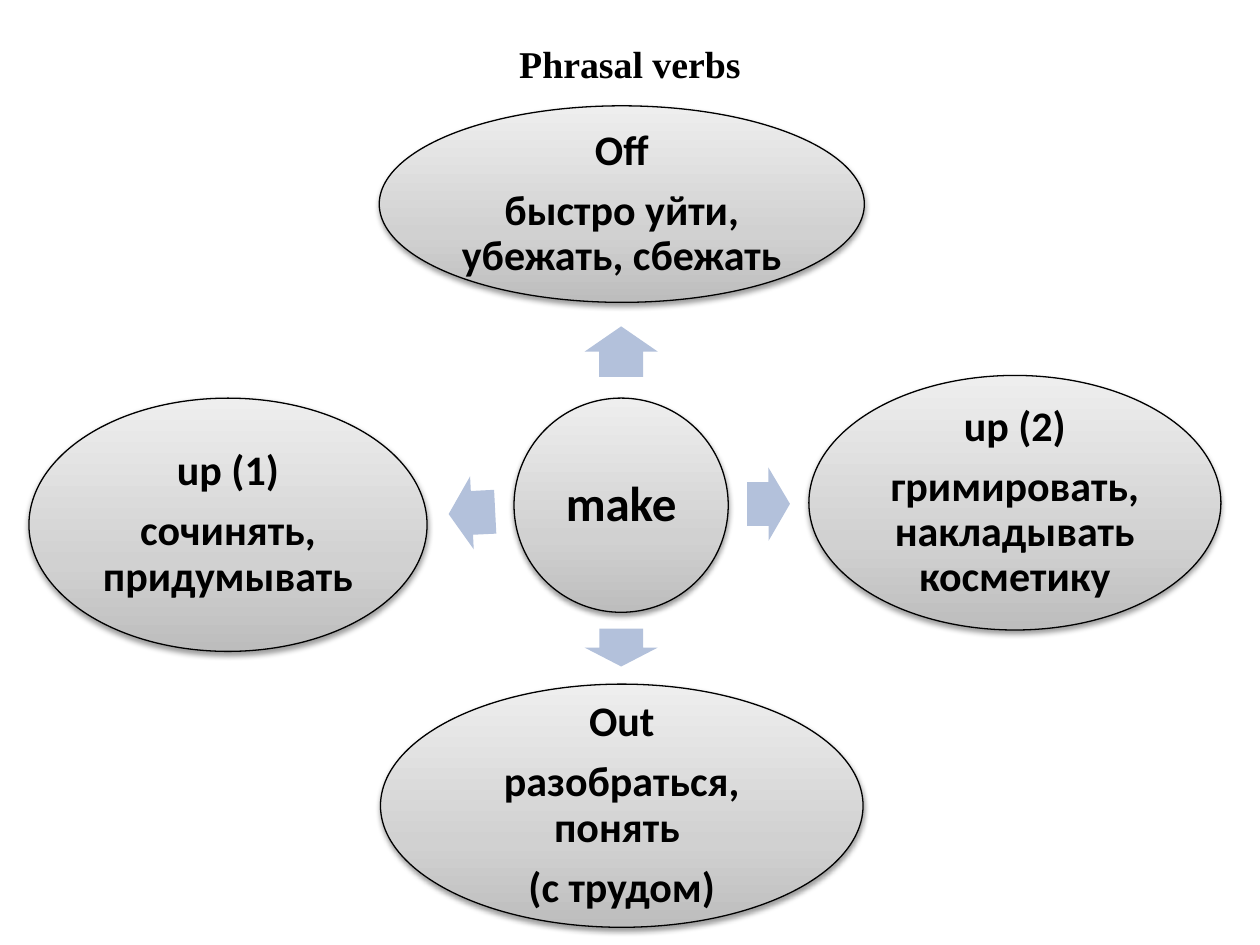
import copy
from dataclasses import dataclass

import pptx
import pptx.dml.color
import pptx.enum.shapes
import pptx.enum.text
import pptx.oxml
import pptx.oxml.ns
import pptx.util
from pptx.util import Inches

BLACK = pptx.dml.color.RGBColor(0x00, 0x00, 0x00)
ARROW_BLUE = pptx.dml.color.RGBColor(0xB3, 0xC1, 0xDB)
GRAY_STOPS = [
    (0.0, pptx.dml.color.RGBColor(0xBD, 0xBD, 0xBD)),
    (0.35, pptx.dml.color.RGBColor(0xD1, 0xD1, 0xD1)),
    (1.0, pptx.dml.color.RGBColor(0xEE, 0xEE, 0xEE)),
]
SHADOW_XML = (
    f'<a:outerShdw {pptx.oxml.ns.nsdecls("a")} blurRad="39370" dist="20320" '
    'dir="5400000" rotWithShape="0"><a:srgbClr val="000000">'
    '<a:alpha val="38000"/></a:srgbClr></a:outerShdw>'
)
SHAPES = pptx.enum.shapes.MSO_SHAPE


@dataclass(frozen=True)
class Bubble:
    left: float
    top: float
    width: float
    height: float
    lines: tuple[str, ...]
    font_size: int = 24
    inset: float = 0.03


@dataclass(frozen=True)
class Arrow:
    left: float
    top: float
    length: float
    rotation: float


ARROW_WIDTH = 0.58
BUBBLES = [
    Bubble(4.08, 3.16, 1.7, 1.7, ("make",), font_size=28, inset=0.04),
    Bubble(3.01, 0.84, 3.85, 1.56, ("Off", "быстро уйти, убежать, сбежать")),
    Bubble(6.42, 2.98, 3.27, 2.02, ("up (2)", "гримировать, накладывать косметику")),
    Bubble(3.02, 5.43, 3.83, 1.93, ("Out", "разобраться, понять ", "(с трудом)")),
    Bubble(0.23, 3.16, 3.16, 2.01, ("up (1)", "сочинять, придумывать")),
]
ARROWS = [
    Arrow(4.73, 2.5, 0.4, 270),
    Arrow(5.93, 3.71, 0.34, 359.7),
    Arrow(4.78, 4.85, 0.3, 90),
    Arrow(3.56, 3.78, 0.37, 177.1),
]


def format_paragraph(paragraph, font_name: str, font_size: float) -> None:
    paragraph.alignment = pptx.enum.text.PP_ALIGN.CENTER
    for run in paragraph.runs:
        run.font.name = font_name
        run.font.size = pptx.util.Pt(font_size)
        run.font.bold = True
        run.font.color.rgb = BLACK


def fill_with_gradient(shape) -> None:
    """Shade the shape from dark gray at the bottom to light gray at the top."""
    shape.fill.gradient()
    shape.fill.gradient_angle = 90
    stop_list = shape._element.spPr.find(".//" + pptx.oxml.ns.qn("a:gsLst"))
    stop_list.append(copy.deepcopy(stop_list[-1]))
    for stop, (position, color) in zip(shape.fill.gradient_stops, GRAY_STOPS):
        stop.position = position
        stop.color.rgb = color


def add_shadow(shape) -> None:
    shape.shadow.inherit = False
    effects = shape._element.spPr.find(pptx.oxml.ns.qn("a:effectLst"))
    effects.append(pptx.oxml.parse_xml(SHADOW_XML))


def add_bubble(slide, bubble: Bubble) -> None:
    shape = slide.shapes.add_shape(
        SHAPES.OVAL, Inches(bubble.left), Inches(bubble.top),
        Inches(bubble.width), Inches(bubble.height),
    )
    fill_with_gradient(shape)
    shape.line.color.rgb = BLACK
    shape.line.width = pptx.util.Pt(0.75)
    add_shadow(shape)

    frame = shape.text_frame
    frame.word_wrap = True
    frame.vertical_anchor = pptx.enum.text.MSO_ANCHOR.MIDDLE
    frame.margin_left = frame.margin_right = Inches(bubble.inset)
    frame.margin_top = frame.margin_bottom = Inches(bubble.inset)
    frame.text = "\n".join(bubble.lines)
    for paragraph in frame.paragraphs:
        paragraph.line_spacing = 0.9
        paragraph.space_after = pptx.util.Pt(0.35 * bubble.font_size)
        format_paragraph(paragraph, "Calibri", bubble.font_size)


def add_arrow(slide, arrow: Arrow) -> None:
    shape = slide.shapes.add_shape(
        SHAPES.RIGHT_ARROW, Inches(arrow.left), Inches(arrow.top),
        Inches(arrow.length), Inches(ARROW_WIDTH),
    )
    shape.adjustments[0] = 0.6
    shape.adjustments[1] = 0.5
    shape.rotation = arrow.rotation
    shape.fill.solid()
    shape.fill.fore_color.rgb = ARROW_BLUE
    shape.line.fill.background()
    shape.shadow.inherit = False


def add_title(slide, text: str) -> None:
    title = slide.shapes.title
    title.left, title.top = Inches(0.5), Inches(0.3)
    title.width, title.height = Inches(9), Inches(0.4)
    title.text_frame.text = text
    title.text_frame.vertical_anchor = pptx.enum.text.MSO_ANCHOR.MIDDLE
    format_paragraph(title.text_frame.paragraphs[0], "Times New Roman", 21.6)


def main() -> None:
    presentation = pptx.Presentation()
    presentation.slide_width = Inches(10)
    presentation.slide_height = Inches(7.5)
    title_only = presentation.slide_layouts[5]
    slide = presentation.slides.add_slide(title_only)
    add_title(slide, "Phrasal verbs")
    for bubble in BUBBLES:
        add_bubble(slide, bubble)
    for arrow in ARROWS:
        add_arrow(slide, arrow)
    presentation.save("out.pptx")


if __name__ == "__main__":
    main()
